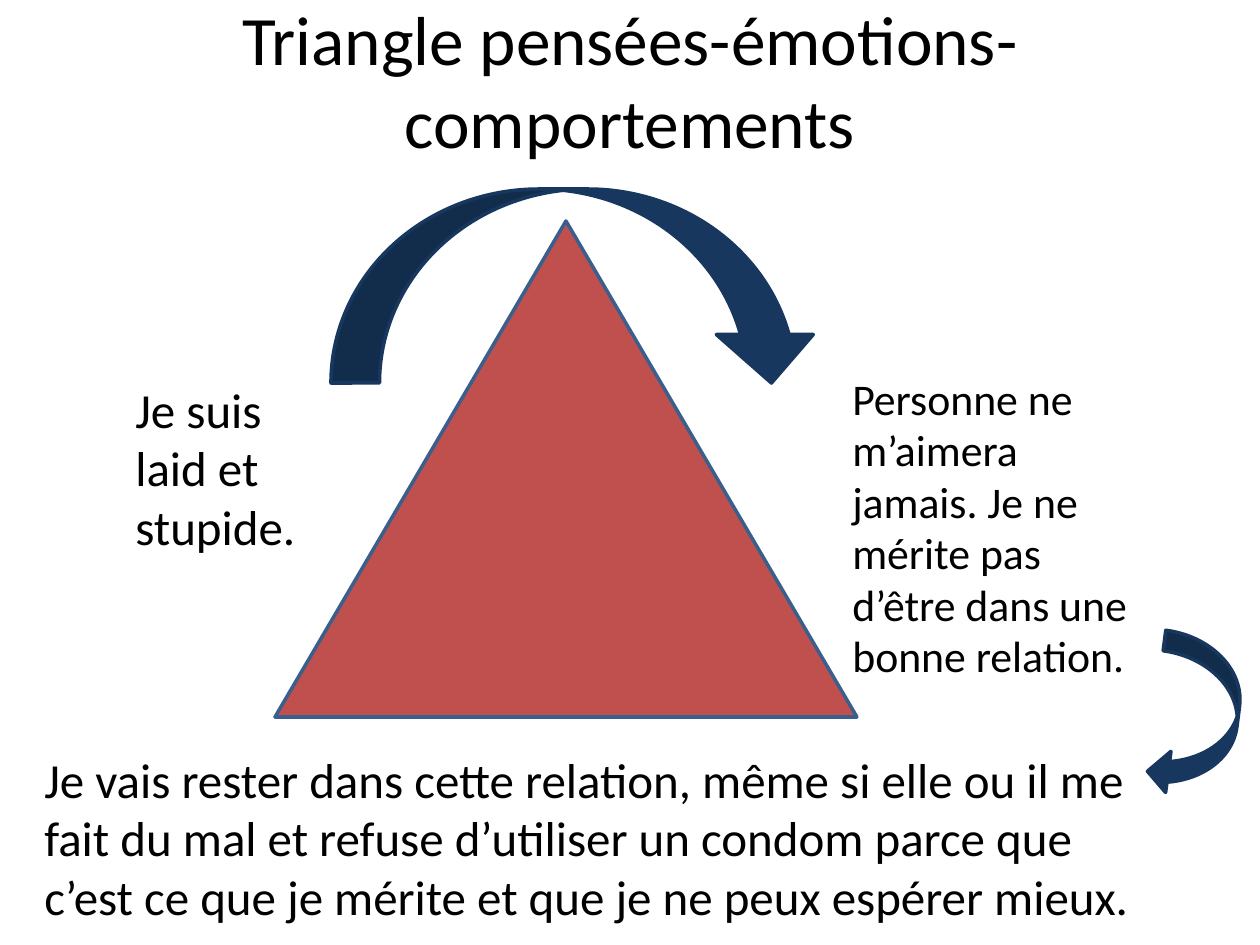
from pptx import Presentation
from pptx.dml.color import RGBColor as Rgb
from pptx.enum.shapes import MSO_SHAPE as Preset
from pptx.enum.text import MSO_ANCHOR as Anchor, MSO_AUTO_SIZE as AutoSize, PP_ALIGN as Align
from pptx.util import Pt

PX = 914400 // 126

THEME = {
    "font": "Calibri",
    "ink": Rgb.from_string("000000"),
    "triangle": Rgb.from_string("C0504D"),
    "outline": Rgb.from_string("3A5F8C"),
    "arrow": Rgb.from_string("17375E"),
    "title": Pt(39.6),
    "statement": Pt(28),
    "belief": Pt(25),
    "line": Pt(2),
}

TITLE = ("Triangle pensées-émotions-comportements", (63, 0, 1134, 158))

FIGURES = [
    (Preset.ISOSCELES_TRIANGLE, (275, 221, 582, 496), "triangle", "outline", 0),
    (Preset.CURVED_DOWN_ARROW, (331, 189, 489, 194), "arrow", "arrow", 0),
    (Preset.CURVED_LEFT_ARROW, (1155, 635, 83, 163), "arrow", "arrow", 7.4),
]

STATEMENTS = [
    ("Je suis laid et stupide.", (123, 373, 214, 190), "statement", 1.0),
    ("Personne ne m’aimera jamais. Je ne mérite pas d’être dans une bonne relation.",
     (840, 368, 305, 278), "belief", 0.98),
    ("Je vais rester dans cette relation, même si elle ou il me fait du mal et refuse "
     "d’utiliser un condom parce que c’est ce que je mérite et que je ne peux espérer mieux.",
     (32, 743, 1134, 190), "statement", 1.0),
]


def emu(box):
    return [length * PX for length in box]


def apply(target, formats):
    for name, value in formats.items():
        setattr(target, name, value)


def write(holder, wording, size, align, anchor, spacing=1.0):
    frame = holder.text_frame
    frame.text = wording
    paragraph = frame.paragraphs[0]
    apply(frame, {"word_wrap": True, "auto_size": AutoSize.NONE, "vertical_anchor": anchor})
    apply(paragraph, {"alignment": align, "line_spacing": spacing})
    font = paragraph.runs[0].font
    apply(font, {"name": THEME["font"], "size": THEME[size]})
    font.color.rgb = THEME["ink"]


def draw(slide, preset, box, fill, outline, rotation):
    figure = slide.shapes.add_shape(preset, *emu(box))
    figure.rotation = rotation
    figure.shadow.inherit = False
    figure.fill.solid()
    figure.fill.fore_color.rgb = THEME[fill]
    figure.line.color.rgb = THEME[outline]
    figure.line.width = THEME["line"]


def main():
    deck = Presentation()
    apply(deck, {"slide_width": 1260 * PX, "slide_height": 945 * PX})
    slide = deck.slides.add_slide(deck.slide_layouts[5])

    wording, box = TITLE
    heading = slide.shapes.title
    apply(heading, dict(zip(("left", "top", "width", "height"), emu(box))))
    write(heading, wording, "title", Align.CENTER, Anchor.MIDDLE)

    for figure in FIGURES:
        draw(slide, *figure)
    for wording, box, size, spacing in STATEMENTS:
        statement = slide.shapes.add_textbox(*emu(box))
        write(statement, wording, size, Align.LEFT, Anchor.TOP, spacing)

    deck.save("out.pptx")


if __name__ == "__main__":
    main()
